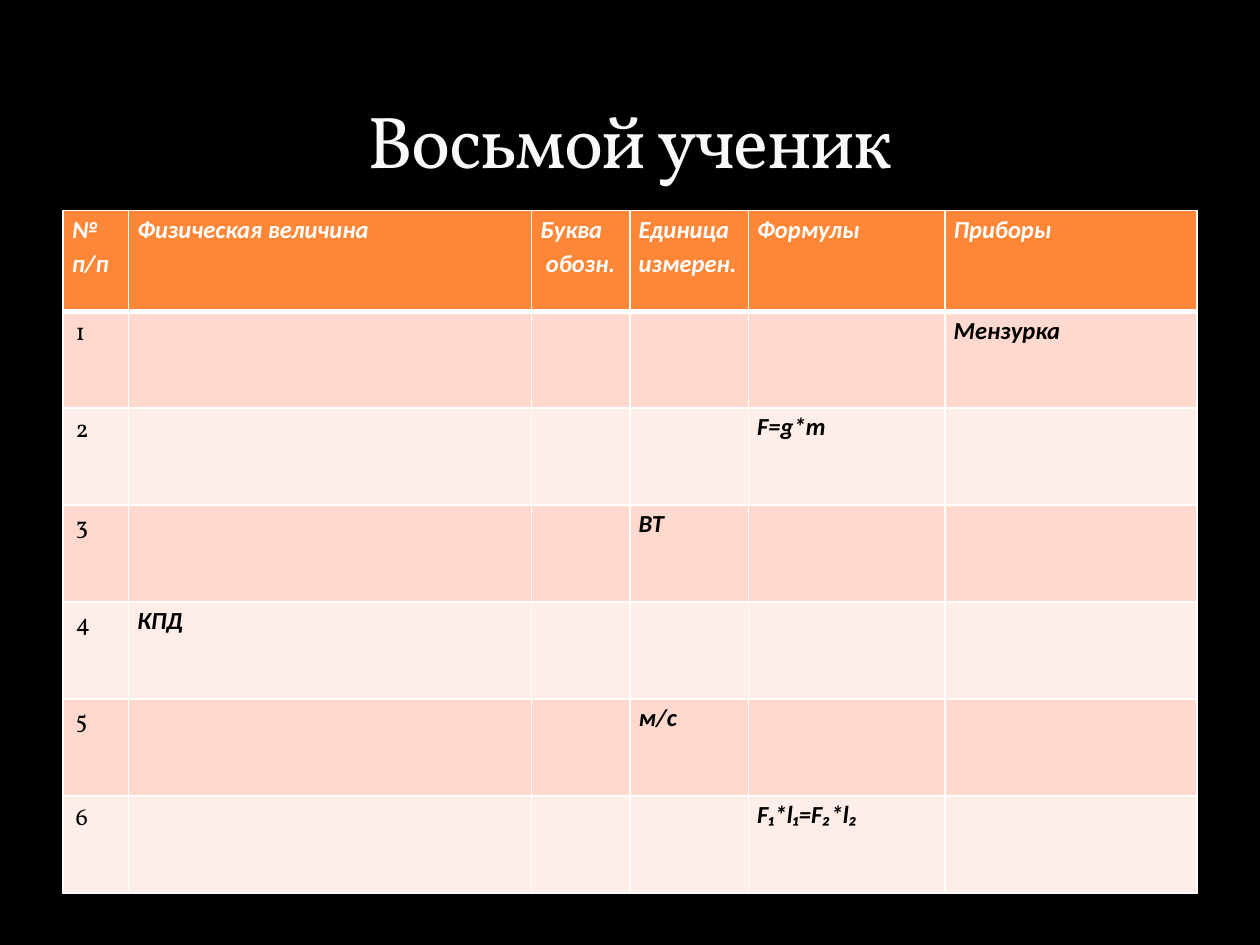
from typing import NamedTuple

from lxml import etree
from pptx import Presentation
from pptx.dml.color import RGBColor
from pptx.enum.text import MSO_ANCHOR, PP_ALIGN
from pptx.oxml.ns import qn
from pptx.util import Inches, Pt

CENTER = PP_ALIGN.CENTER
BOTTOM = MSO_ANCHOR.BOTTOM

COLORS = {
    "background": "000000",
    "title": "F9F9F9",
    "header": "FE8637",
    "odd_row": "FFD9CE",
    "even_row": "FFEDE8",
    "white": "FFFFFF",
    "black": "000000",
}


class Column(NamedTuple):
    heading: str
    width: float


COLUMNS = [
    Column("№ п/п", 0.52),
    Column("Физическая величина", 3.2),
    Column("Буква\n обозн.", 0.78),
    Column("Единица измерен.", 0.94),
    Column("Формулы", 1.56),
    Column("Приборы", 2),
]
# Each numbered row holds one given entry: (column, text)
GIVEN = [
    (5, "Мензурка"),
    (4, "F=g*m"),
    (3, "ВТ"),
    (1, "КПД"),
    (3, "м/с"),
    (4, "F₁*l₁=F₂*l₂"),
]
HEADER_HEIGHT = 0.8
ROW_HEIGHT = 0.77


def rgb(name: str) -> RGBColor:
    return RGBColor.from_string(COLORS[name])


def style_cell(cell, fill: str, top: float = 1, bottom: float = 1) -> None:
    """Fill the cell and give it white borders, with widths in points."""
    properties = cell._tc.get_or_add_tcPr()
    for side, width in (("L", 1), ("R", 1), ("T", top), ("B", bottom)):
        line = etree.SubElement(properties, qn(f"a:ln{side}"), w=str(Pt(width)))
        solid = etree.SubElement(line, qn("a:solidFill"))
        etree.SubElement(solid, qn("a:srgbClr"), val=COLORS["white"])
    cell.fill.solid()
    cell.fill.fore_color.rgb = rgb(fill)


def write_number(cell, number: int) -> None:
    cell.text = str(number)
    font = cell.text_frame.paragraphs[0].font
    font.name, font.size = "Vollkorn", Pt(14)
    font.bold = font.italic = False
    font.color.rgb = rgb("black")


def write_label(cell, text: str, color: str) -> None:
    cell.text = text
    cell.margin_left = cell.margin_right = Inches(0.07)
    cell.margin_top = cell.margin_bottom = Inches(0)
    for paragraph in cell.text_frame.paragraphs:
        paragraph.line_spacing = 1.15
        font = paragraph.font
        font.name, font.size = "Calibri", Pt(14)
        font.bold = font.italic = True
        font.color.rgb = rgb(color)


def add_quantities_table(slide) -> None:
    height = HEADER_HEIGHT + ROW_HEIGHT * len(GIVEN)
    table = slide.shapes.add_table(
        len(GIVEN) + 1, len(COLUMNS),
        Inches(0.5), Inches(1.67), Inches(9), Inches(height),
    ).table
    table.rows[0].height = Inches(HEADER_HEIGHT)
    for index, column in enumerate(COLUMNS):
        table.columns[index].width = Inches(column.width)
        heading = table.cell(0, index)
        style_cell(heading, "header", bottom=3)
        write_label(heading, column.heading, "white")

    for number, (given_column, text) in enumerate(GIVEN, start=1):
        table.rows[number].height = Inches(ROW_HEIGHT)
        fill = "odd_row" if number % 2 else "even_row"
        for index in range(len(COLUMNS)):
            style_cell(table.cell(number, index), fill, top=3 if number == 1 else 1)
        write_number(table.cell(number, 0), number)
        write_label(table.cell(number, given_column), text, "black")


def add_title(slide, text: str) -> None:
    frame = slide.shapes.add_textbox(
        Inches(0.5), Inches(0.17), Inches(9), Inches(1.33)
    ).text_frame
    frame.word_wrap = True
    frame.vertical_anchor = BOTTOM
    paragraph = frame.paragraphs[0]
    paragraph.alignment = CENTER
    run = paragraph.add_run()
    run.text = text
    run._r.get_or_add_rPr().set("spc", "-100")
    font = paragraph.font
    font.name, font.size = "Vollkorn", Pt(42)
    font.color.rgb = rgb("title")


def main() -> None:
    presentation = Presentation()
    presentation.slide_width = Inches(10)
    presentation.slide_height = Inches(7.5)
    slide = presentation.slides.add_slide(presentation.slide_layouts[6])
    slide.background.fill.solid()
    slide.background.fill.fore_color.rgb = rgb("background")
    add_quantities_table(slide)
    add_title(slide, "Восьмой ученик")
    presentation.save("out.pptx")


if __name__ == "__main__":
    main()
